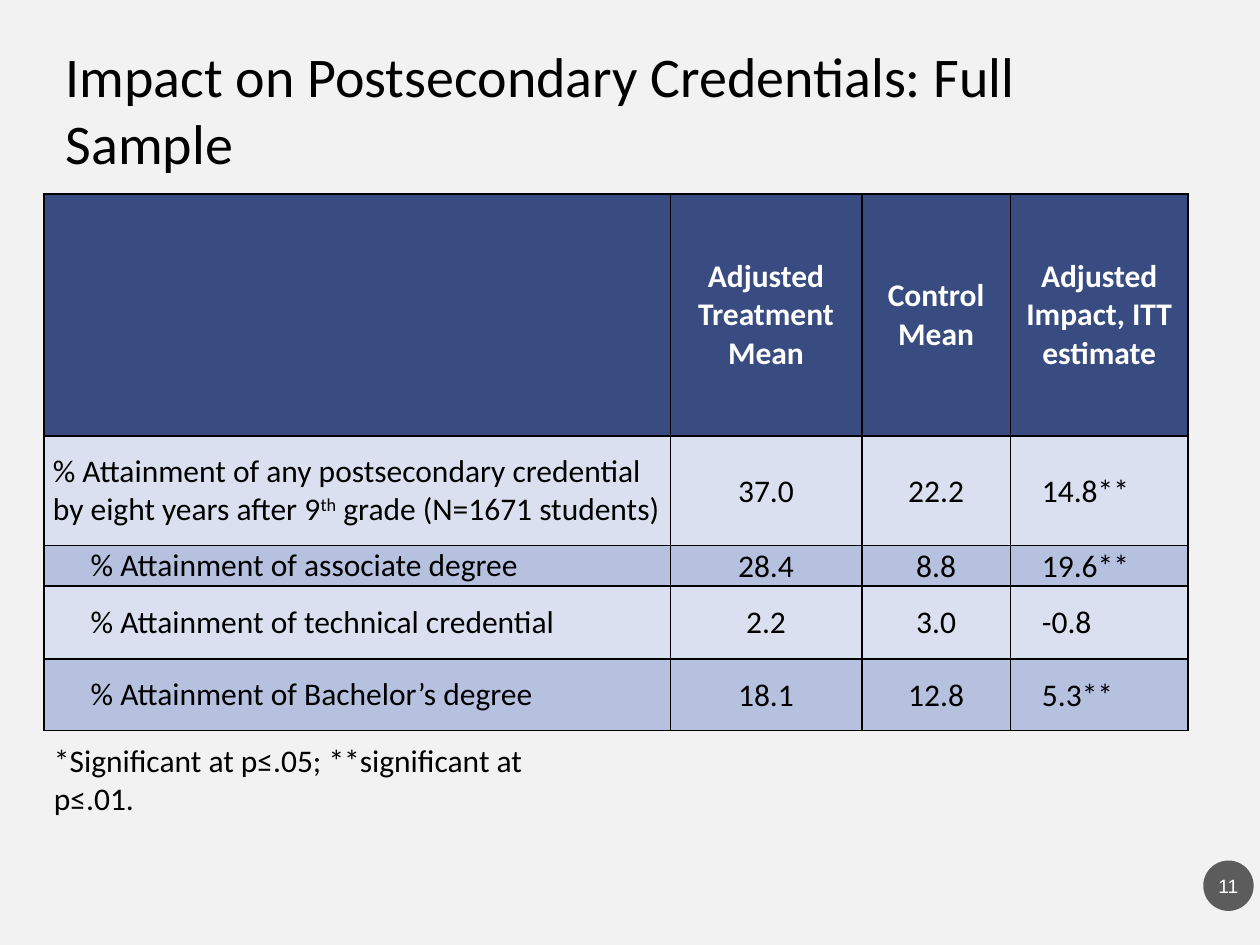
from lxml.etree import SubElement
from pptx import Presentation
from pptx.dml.color import RGBColor
from pptx.enum.shapes import MSO_SHAPE
from pptx.enum.text import MSO_ANCHOR, MSO_AUTO_SIZE, PP_ALIGN
from pptx.oxml import parse_xml
from pptx.oxml.ns import nsdecls, qn
from pptx.util import Inches, Pt

COLUMNS = [4.97, 1.52, 1.18, 1.41]
ROWS = [1.92, 0.87, 0.32, 0.58, 0.57]
HEADER, BANDS = "384C81", ["DAE0EF", "B5C1DF"]
RESULTS = [
    ["", "Adjusted Treatment Mean", "Control Mean", "Adjusted Impact, ITT estimate"],
    ["% Attainment of any postsecondary credential by eight years after 9^th^ grade (N=1671 students)",
     "37.0", "22.2", "14.8**"],
    ["% Attainment of associate degree", "28.4", "8.8", "19.6**"],
    ["% Attainment of technical credential", "2.2", "3.0", "-0.8"],
    ["% Attainment of Bachelor’s degree", "18.1", "12.8", "5.3**"],
]


def color(value):
    """Turn a hex string into a colour."""
    return RGBColor.from_string(value)


def style(para, size, ink="000000", bold=False, face="Calibri", align=PP_ALIGN.LEFT):
    """Format a paragraph and all its runs."""
    para.alignment = align
    for span in para.runs:
        font = span.font
        font.name, font.size, font.bold = face, Pt(size), bold
        font.color.rgb = color(ink)


def place(shape, box):
    """Move a shape to a box given in inches."""
    shape.left, shape.top, shape.width, shape.height = map(Inches, box)


def add_title(page, box, text):
    """Fill and place the title placeholder."""
    title = page.shapes.title
    place(title, box)
    frame = title.text_frame
    frame.text = text
    frame.word_wrap = True
    frame.auto_size = MSO_AUTO_SIZE.NONE
    frame.vertical_anchor = MSO_ANCHOR.TOP
    style(frame.paragraphs[0], 32)


def set_borders(cell):
    """Draw a thin black line on each side of a cell."""
    properties = cell._tc.get_or_add_tcPr()
    for index, side in enumerate(["lnL", "lnR", "lnT", "lnB"]):
        properties.insert(index, parse_xml(
            f'<a:{side} {nsdecls("a")} w="12700"><a:solidFill>'
            f'<a:srgbClr val="000000"/></a:solidFill></a:{side}>'))


def write_cell(cell, text, row, column):
    """Write and format one cell by its place in the table."""
    header, label, impact = row == 0, column == 0, column == 3
    cell.fill.solid()
    cell.fill.fore_color.rgb = color(HEADER if header else BANDS[(row - 1) % 2])
    set_borders(cell)
    cell.vertical_anchor = MSO_ANCHOR.MIDDLE
    side = 0.07 if header or label else 0.01
    cell.margin_left = Inches(0.25 if impact and not header else side)
    cell.margin_right = Inches(side)
    cell.margin_top = Inches(0 if header or label else 0.01)
    cell.margin_bottom = 0
    para = cell.text_frame.paragraphs[0]
    for index, part in enumerate(text.split("^")):
        span = para.add_run()
        span.text = part
        if index % 2:
            span._r.get_or_add_rPr().set("baseline", "30000")
    if label and row > 1:
        para._p.get_or_add_pPr().set("marL", str(Inches(0.3)))
    left = label or (impact and not header)
    style(para, 18, "FFFFFF" if header else "000000", header,
          align=PP_ALIGN.LEFT if left else PP_ALIGN.CENTER)


def add_results(page, box):
    """Build the results table, sharing the box among its columns and rows."""
    left, top, width, height = box
    table = page.shapes.add_table(len(ROWS), len(COLUMNS), *map(Inches, box)).table
    for column, share in zip(table.columns, COLUMNS):
        column.width = Inches(width * share / sum(COLUMNS))
    for row, share in zip(table.rows, ROWS):
        row.height = Inches(height * share / sum(ROWS))
    for row, texts in enumerate(RESULTS):
        for column, text in enumerate(texts):
            write_cell(table.cell(row, column), text, row, column)


def add_note(page, box, text):
    """Add the significance note below the table."""
    frame = page.shapes.add_textbox(*map(Inches, box)).text_frame
    frame.word_wrap = True
    frame.text = text
    style(frame.paragraphs[0], 18)


def add_page_number(page, box, number):
    """Add the translucent round page number."""
    badge = page.shapes.add_shape(MSO_SHAPE.OVAL, *map(Inches, box))
    badge.shadow.inherit = False
    badge.fill.solid()
    badge.fill.fore_color.rgb = color("1D1D1D")
    tint = badge._element.spPr.find(qn("a:solidFill")).find(qn("a:srgbClr"))
    SubElement(tint, qn("a:alpha")).set("val", "70000")
    badge.line.fill.background()
    frame = badge.text_frame
    frame.margin_left = frame.margin_right = Inches(0.02)
    frame.word_wrap = False
    frame.vertical_anchor = MSO_ANCHOR.MIDDLE
    frame.text = number
    style(frame.paragraphs[0], 11, "FFFFFF", face="Arial", align=PP_ALIGN.CENTER)


def main():
    """Build and save the slide."""
    deck = Presentation()
    deck.slide_width, deck.slide_height = Inches(10), Inches(7.5)
    page = deck.slides.add_slide(deck.slide_layouts[5])
    page.background.fill.solid()
    page.background.fill.fore_color.rgb = color("F2F2F2")
    add_results(page, (0.35, 1.54, 9.08, 4.26))
    add_title(page, (0.42, 0.28, 8.67, 1.18),
              "Impact on Postsecondary Credentials: Full Sample")
    add_page_number(page, (9.55, 6.83, 0.4, 0.4), "11")
    add_note(page, (0.33, 5.83, 4.5, 0.4),
             "*Significant at p≤.05; **significant at p≤.01.")
    deck.save("out.pptx")


if __name__ == "__main__":
    main()
